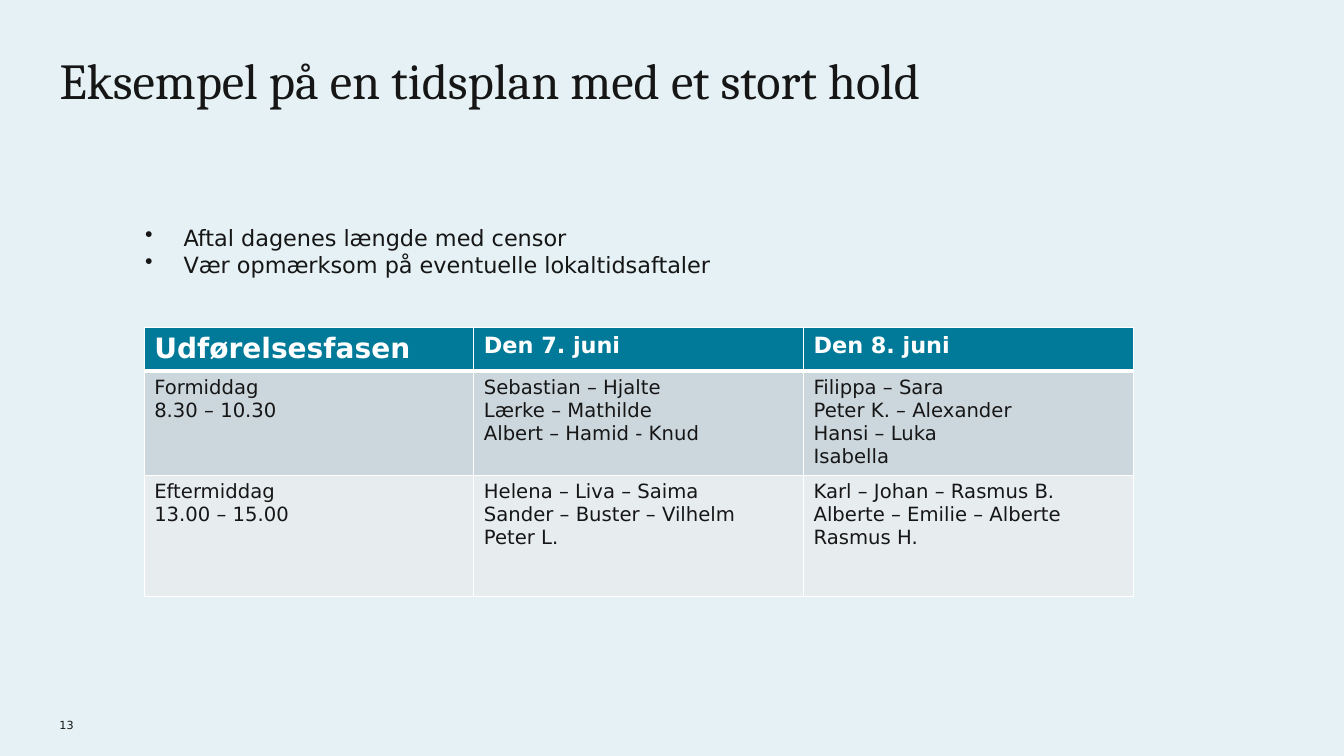
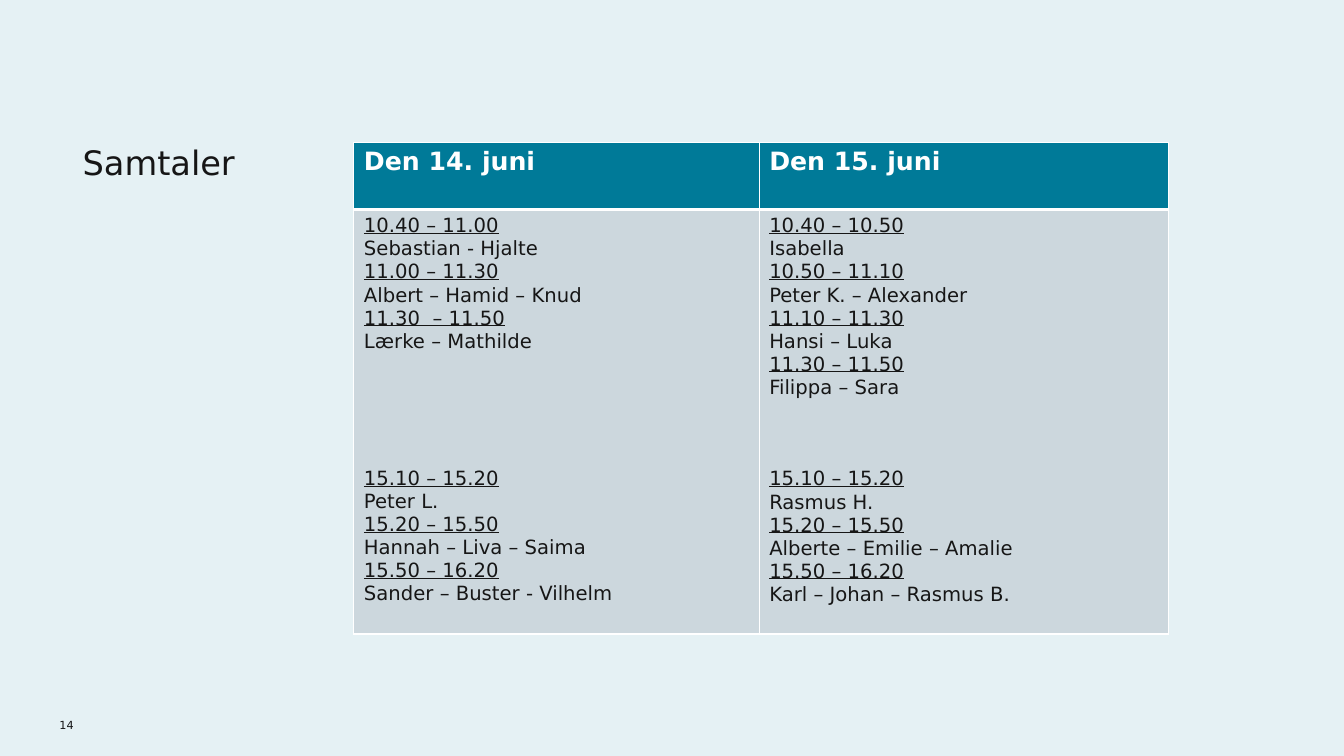
import pptx
import pptx.dml.color
import pptx.enum.text
import pptx.oxml.ns
import pptx.util
from lxml import etree

Inches = pptx.util.Inches
Pt = pptx.util.Pt

COLORS = {
    "page": "E5F1F4",
    "text": "161616",
    "white": "FFFFFF",
    "header": "007A98",
    "band_dark": "CCD7DD",
    "band_light": "E7ECEF",
}
TITLE_FONT = "Cambria"
BODY_FONT = "DejaVu Sans"
BODY_SIZE = 14
BODY_LINE = 16.4  # points from one line of body text to the next

PLAN_HEADER = [("Udførelsesfasen", 20), ("Den 7. juni", 16), ("Den 8. juni", 16)]
PLAN_ROWS = [
    [
        ["Formiddag", "8.30 – 10.30"],
        ["Sebastian – Hjalte", "Lærke – Mathilde", "Albert – Hamid - Knud"],
        ["Filippa – Sara", "Peter K. – Alexander", "Hansi – Luka", "Isabella"],
    ],
    [
        ["Eftermiddag", "13.00 – 15.00"],
        ["Helena – Liva – Saima", "Sander – Buster – Vilhelm", "Peter L."],
        ["Karl – Johan – Rasmus B.", "Alberte – Emilie – Alberte", "Rasmus H."],
    ],
]

# Each day: heading, morning talks, afternoon talks, lines between the two
TALK_DAYS = [
    (
        "Den 14. juni",
        [
            ("10.40 – 11.00", "Sebastian - Hjalte"),
            ("11.00 – 11.30", "Albert – Hamid – Knud"),
            ("11.30  – 11.50", "Lærke – Mathilde"),
        ],
        [
            ("15.10 – 15.20", "Peter L."),
            ("15.20 – 15.50", "Hannah – Liva – Saima"),
            ("15.50 – 16.20", "Sander – Buster - Vilhelm"),
        ],
        5,
    ),
    (
        "Den 15. juni",
        [
            ("10.40 – 10.50", "Isabella"),
            ("10.50 – 11.10", "Peter K. – Alexander"),
            ("11.10 – 11.30", "Hansi – Luka"),
            ("11.30 – 11.50", "Filippa – Sara"),
        ],
        [
            ("15.10 – 15.20", "Rasmus H."),
            ("15.20 – 15.50", "Alberte – Emilie – Amalie"),
            ("15.50 – 16.20", "Karl – Johan – Rasmus B."),
        ],
        3,
    ),
]


def rgb(name):
    return pptx.dml.color.RGBColor.from_string(COLORS[name])


def add_bullet(para, indent):
    properties = para._p.get_or_add_pPr()
    properties.set("marL", str(Inches(indent)))
    properties.set("indent", str(-Inches(indent)))
    bullet = etree.SubElement(properties, pptx.oxml.ns.qn("a:buChar"))
    bullet.set("char", "•")


def write(frame, text, size=BODY_SIZE, color="text", font=BODY_FONT, bold=False,
          underline=False, bullet_indent=None, space_before=0, line_spacing=None):
    """Add one paragraph to the frame, using its first one while that is empty."""
    first = frame.paragraphs[0]
    para = frame.add_paragraph() if first.runs else first
    if bullet_indent:
        add_bullet(para, bullet_indent)
    if space_before:
        para.space_before = Pt(space_before)
    if line_spacing:
        para.line_spacing = line_spacing
    span = para.add_run()
    span.text = text
    span.font.name = font
    span.font.size = Pt(size)
    span.font.bold = bold
    span.font.underline = underline
    span.font.color.rgb = rgb(color)


def add_text_box(page, left, top, width, height, lines, anchor="TOP", **text_format):
    box = page.shapes.add_textbox(Inches(left), Inches(top), Inches(width), Inches(height))
    frame = box.text_frame
    frame.word_wrap = True
    frame.margin_left = frame.margin_right = 0
    frame.margin_top = frame.margin_bottom = 0
    frame.vertical_anchor = getattr(pptx.enum.text.MSO_ANCHOR, anchor)
    for line in lines:
        write(frame, line, **text_format)


def set_borders(cell, **widths):
    properties = cell._tc.get_or_add_tcPr()
    for side in "LRTB":
        line = etree.SubElement(properties, pptx.oxml.ns.qn("a:ln" + side))
        line.set("w", str(Pt(widths.get(side, 1))))
        fill = etree.SubElement(line, pptx.oxml.ns.qn("a:solidFill"))
        etree.SubElement(fill, pptx.oxml.ns.qn("a:srgbClr")).set("val", COLORS["white"])


def add_schedule(page, left, top, column_widths, row_heights):
    """Add a table with a teal header, banded rows and a thick line below the header."""
    frame = page.shapes.add_table(
        len(row_heights), len(column_widths), Inches(left), Inches(top),
        Inches(sum(column_widths)), Inches(sum(row_heights)))
    table = frame.table
    table.horz_banding = False
    for column, width in zip(table.columns, column_widths):
        column.width = Inches(width)
    bands = ["band_light", "band_dark"]
    for index, (row, height) in enumerate(zip(table.rows, row_heights)):
        row.height = Inches(height)
        borders = {0: {"B": 3}, 1: {"T": 3}}.get(index, {})
        for cell in row.cells:
            set_borders(cell, **borders)
            cell.fill.solid()
            cell.fill.fore_color.rgb = rgb(bands[index % 2] if index else "header")
    return table


def write_header(table, headings):
    for cell, (heading, size) in zip(table.rows[0].cells, headings):
        write(cell.text_frame, heading, size=size, color="white", bold=True)


def write_talks(frame, talks, gap_before=0):
    for index, (time, names) in enumerate(talks):
        write(frame, time, underline=True, space_before=0 if index else gap_before)
        write(frame, names)


def add_page(deck, number):
    page = deck.slides.add_slide(deck.slide_layouts[6])
    page.background.fill.solid()
    page.background.fill.fore_color.rgb = rgb("page")
    add_text_box(page, 0.59, 7.06, 0.3, 0.2, [str(number)], anchor="BOTTOM", size=8)
    return page


def build_plan_page(deck, number):
    page = add_page(deck, number)
    add_text_box(page, 0.59, 0.59, 10.12, 1.02,
                 ["Eksempel på en tidsplan med et stort hold"],
                 size=36, font=TITLE_FONT, line_spacing=0.83)
    add_text_box(page, 1.44, 2.22, 9.79, 0.55,
                 ["Aftal dagenes længde med censor",
                  "Vær opmærksom på eventuelle lokaltidsaftaler"],
                 size=16, bullet_indent=0.38)
    table = add_schedule(page, 1.43, 3.25, [3.27] * 3, [0.42, 1.01, 1.2])
    write_header(table, PLAN_HEADER)
    for row_index, groups in enumerate(PLAN_ROWS, start=1):
        for cell, lines in zip(table.rows[row_index].cells, groups):
            for line in lines:
                write(cell.text_frame, line)


def build_talks_page(deck, number):
    page = add_page(deck, number)
    add_text_box(page, 0.82, 1.41, 1.66, 0.4, ["Samtaler"], size=24)
    table = add_schedule(page, 3.51, 1.41, [4.02, 4.06], [0.67, 4.21])
    write_header(table, [(day[0], 18) for day in TALK_DAYS])
    for cell, (_, morning, afternoon, gap) in zip(table.rows[1].cells, TALK_DAYS):
        write_talks(cell.text_frame, morning)
        write_talks(cell.text_frame, afternoon, gap_before=gap * BODY_LINE)


def main():
    deck = pptx.Presentation()
    deck.slide_width = Inches(13.33)
    deck.slide_height = Inches(7.5)
    build_plan_page(deck, 13)
    build_talks_page(deck, 14)
    deck.save("out.pptx")


if __name__ == "__main__":
    main()
